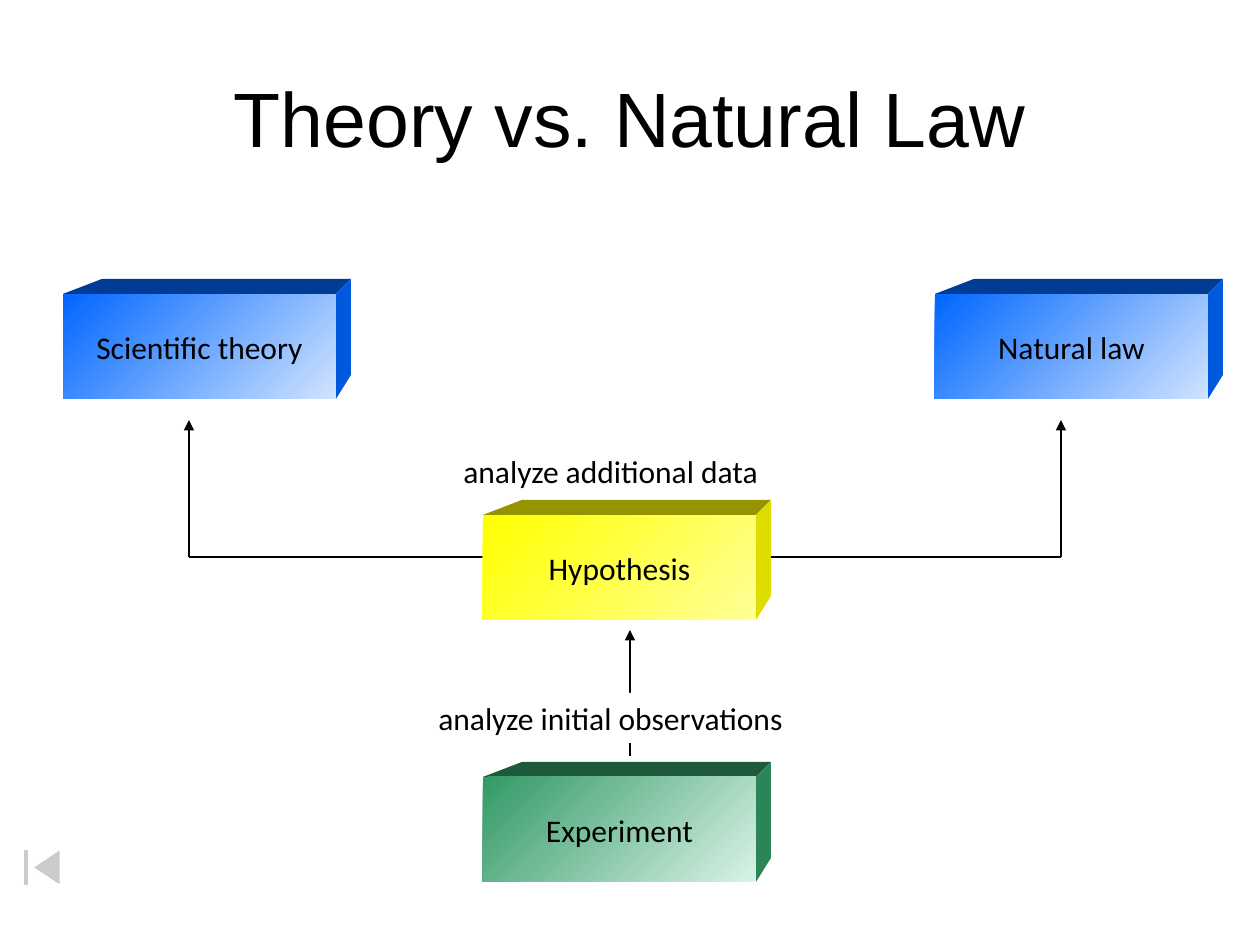
import pptx
import pptx.util
import pptx.dml.color
import pptx.enum.shapes
import pptx.enum.text
import pptx.oxml
import pptx.oxml.ns
import lxml.etree

PX = 914400 // 126
COLORS = {"ink": "000000", "paper": "FFFFFF"}
# front gradient start and end, top face, right face
BLOCKS = {
    "blue": ("0066FF", "D1E4FF", "003B94", "0058DD"),
    "yellow": ("FFFF00", "FFFF97", "949400", "DDDD00"),
    "green": ("339966", "D9F3E6", "1E593B", "2C8558"),
}
BLOCK_W, BLOCK_H = 273, 105
DEPTH, TOP_INSET, SIDE_INSET = 15, 39, 24
ALIGN = pptx.enum.text.PP_ALIGN
SHAPE = pptx.enum.shapes.MSO_SHAPE


def rgb(value):
    return pptx.dml.color.RGBColor.from_string(value)


def add_element(parent, tag, **attributes):
    lxml.etree.SubElement(parent, pptx.oxml.ns.qn(tag), attributes)


class Deck:
    def __init__(self, width, height):
        self.prs = pptx.Presentation()
        self.prs.slide_width = width * PX
        self.prs.slide_height = height * PX
        self.slide = self.prs.slides.add_slide(self.prs.slide_layouts[5])

    def set_text(self, sp, text, font, size, align):
        tf = sp.text_frame
        tf.text = text
        tf.word_wrap = True
        tf.vertical_anchor = pptx.enum.text.MSO_ANCHOR.MIDDLE
        p = tf.paragraphs[0]
        p.alignment = align
        r = p.runs[0]
        r.font.name = font
        r.font.size = pptx.util.Pt(size)
        r.font.color.rgb = rgb(COLORS["ink"])

    def title(self, text, x, y, w, h):
        sp = self.slide.shapes.title
        sp.left, sp.top, sp.width, sp.height = x * PX, y * PX, w * PX, h * PX
        self.set_text(sp, text, "Arial", 44, ALIGN.CENTER)

    def label(self, text, x, y, w, h, fill=None):
        sp = self.slide.shapes.add_textbox(x * PX, y * PX, w * PX, h * PX)
        if fill:
            sp.fill.solid()
            sp.fill.fore_color.rgb = rgb(fill)
        self.set_text(sp, text, "Calibri", 18, ALIGN.LEFT)

    def face(self, points, color):
        builder = self.slide.shapes.build_freeform(*points[0], scale=PX)
        builder.add_line_segments(points[1:], close=True)
        sp = builder.convert_to_shape()
        sp.shadow.inherit = False
        sp.fill.solid()
        sp.fill.fore_color.rgb = rgb(color)
        sp.line.fill.background()

    def block(self, text, x, y, palette):
        """Labelled box with a gradient front, a top face and a right face."""
        start, end, top, side = BLOCKS[palette]
        right, bottom = x + BLOCK_W, y + BLOCK_H
        corner = (right + DEPTH, y - DEPTH)
        self.face([(x, y), (x + TOP_INSET, y - DEPTH), corner, (right, y)], top)
        self.face([(right, y), corner, (right + DEPTH, bottom - SIDE_INSET),
                   (right, bottom)], side)
        sp = self.slide.shapes.add_shape(
            SHAPE.RECTANGLE, x * PX, y * PX, BLOCK_W * PX, BLOCK_H * PX)
        sp.shadow.inherit = False
        sp.line.fill.background()
        sp.fill.gradient()
        sp.fill.gradient_angle = 315
        for stop, color in zip(sp.fill.gradient_stops, (start, end)):
            stop.color.rgb = rgb(color)
        self.set_text(sp, text, "Calibri", 18, ALIGN.CENTER)

    def line(self, x1, y1, x2, y2, arrow=False):
        s = self.slide.shapes.add_connector(
            pptx.enum.shapes.MSO_CONNECTOR.STRAIGHT,
            x1 * PX, y1 * PX, x2 * PX, y2 * PX)
        s.line.color.rgb = rgb(COLORS["ink"])
        s.line.width = pptx.util.Pt(0.75)
        properties = s._element.spPr
        if arrow:
            ln = properties.find(pptx.oxml.ns.qn("a:ln"))
            add_element(ln, "a:tailEnd", type="triangle")
        add_element(properties, "a:effectLst")

    def back_button(self, x, y, w, h):
        sp = self.slide.shapes.add_shape(
            SHAPE.ACTION_BUTTON_BEGINNING, x * PX, y * PX, w * PX, h * PX)
        sp.shadow.inherit = False
        sp.fill.solid()
        sp.fill.fore_color.rgb = rgb(COLORS["paper"])
        color = sp._element.spPr.find(".//" + pptx.oxml.ns.qn("a:srgbClr"))
        add_element(color, "a:alpha", val="50000")
        sp.line.color.rgb = rgb(COLORS["paper"])
        sp.line.width = pptx.util.Pt(0.75)


def main():
    deck = Deck(1260, 945)
    deck.line(630, 756, 630, 630, arrow=True)
    deck.title("Theory vs. Natural Law", 63, 38, 1134, 158)
    deck.block("Scientific theory", 63, 294, "blue")
    deck.block("Natural law", 935, 294, "blue")
    deck.block("Experiment", 483, 777, "green")
    for start, end in ((756, 1061), (494, 189)):
        deck.line(start, 557, end, 557)
        deck.line(end, 557, end, 420, arrow=True)
    deck.block("Hypothesis", 483, 515, "yellow")
    deck.label("analyze additional data", 451, 446, 348, 50)
    deck.label("analyze initial observations", 426, 693, 402, 50, COLORS["paper"])
    deck.back_button(0, 843, 84, 49)
    deck.prs.save("out.pptx")


if __name__ == "__main__":
    main()
